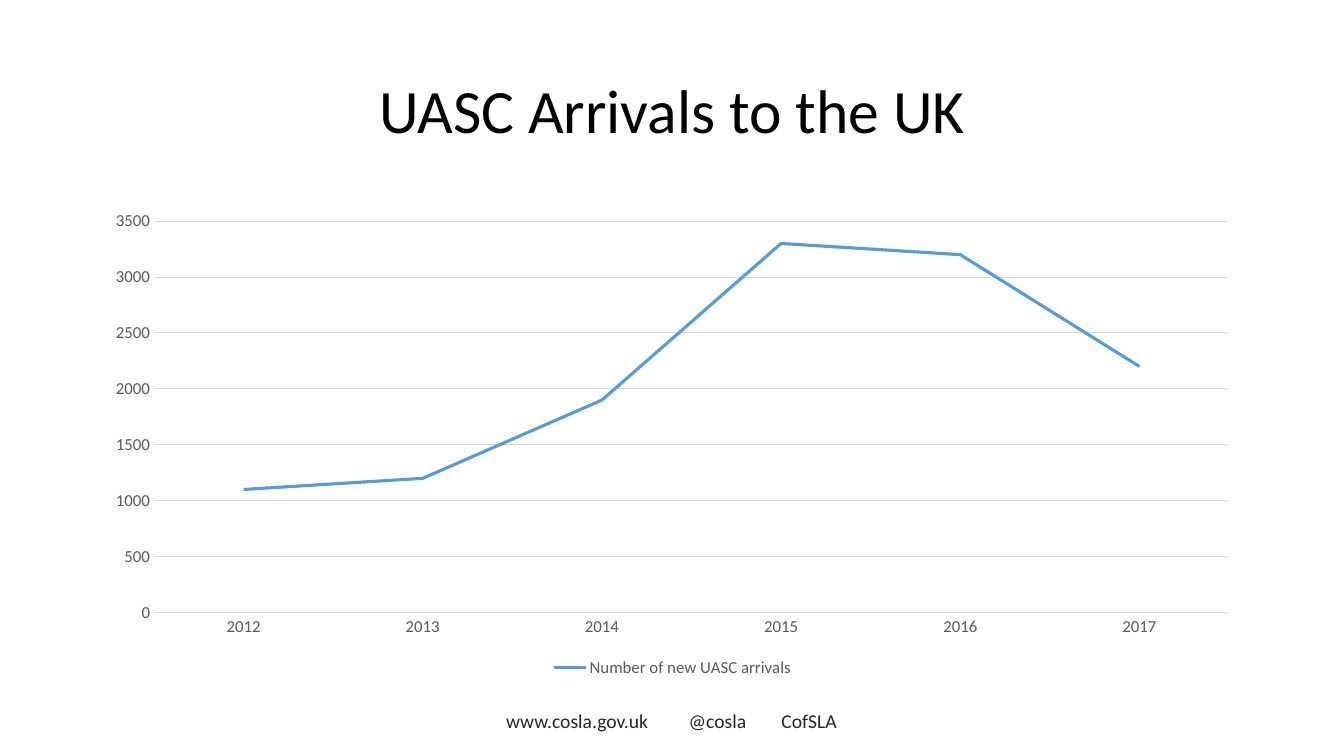
from pptx import Presentation
from pptx.chart.data import CategoryChartData
from pptx.dml.color import RGBColor
from pptx.enum.chart import XL_CHART_TYPE, XL_LEGEND_POSITION, XL_MARKER_STYLE, XL_TICK_MARK
from pptx.enum.text import MSO_ANCHOR, PP_ALIGN
from pptx.oxml.ns import qn
from pptx.util import Inches, Pt
from lxml import etree

LINE = XL_CHART_TYPE.LINE
BOTTOM = XL_LEGEND_POSITION.BOTTOM
NO_MARKER = XL_MARKER_STYLE.NONE
NO_TICK = XL_TICK_MARK.NONE
MIDDLE = MSO_ANCHOR.MIDDLE
CENTER, LEFT = PP_ALIGN.CENTER, PP_ALIGN.LEFT

TITLE = "UASC Arrivals to the UK"
SERIES_NAME = "Number of new UASC arrivals"
ARRIVALS = {"2012": 1100, "2013": 1200, "2014": 1900,
            "2015": 3300, "2016": 3200, "2017": 2200}
CONTACTS = ["www.cosla.gov.uk", "@cosla", "CofSLA"]
CONTACT_TABS = [1.81, 2.73]
FONT = "Calibri"
COLORS = {"title": "000000", "axis": "595959", "grid": "D9D9D9",
          "arrivals": "5B9BD5", "contacts": "262626"}
MARGIN, CONTENT_WIDTH = Inches(0.92), Inches(11.5)


def color(key):
    return RGBColor.from_string(COLORS[key])


def style_font(font, size, key):
    font.name = FONT
    font.size = Pt(size)
    font.bold = False
    font.color.rgb = color(key)


def style_line(line, key, width):
    line.color.rgb = color(key)
    line.width = Pt(width)


def add_title(slide):
    title = slide.shapes.title
    title.left, title.top = MARGIN, Inches(0.4)
    title.width, title.height = CONTENT_WIDTH, Inches(1.45)
    title.text_frame.text = TITLE
    title.text_frame.vertical_anchor = MIDDLE
    heading = title.text_frame.paragraphs[0]
    heading.alignment = CENTER
    heading.line_spacing = 0.9
    style_font(heading.runs[0].font, 44, "title")


def add_arrivals_chart(slide):
    data = CategoryChartData()
    data.categories = list(ARRIVALS)
    data.add_series(SERIES_NAME, list(ARRIVALS.values()))
    chart = slide.shapes.add_chart(
        LINE, MARGIN, Inches(2), CONTENT_WIDTH, Inches(4.76), data).chart
    style_font(chart.font, 12, "axis")
    chart.has_title = False
    chart.has_legend = True
    chart.legend.position = BOTTOM
    chart.legend.include_in_layout = False
    style_font(chart.legend.font, 12, "axis")

    years, counts = chart.category_axis, chart.value_axis
    for axis in (years, counts):
        axis.major_tick_mark = axis.minor_tick_mark = NO_TICK
        style_font(axis.tick_labels.font, 12, "axis")
    style_line(years.format.line, "grid", 0.75)
    counts.format.line.fill.background()
    style_line(counts.major_gridlines.format.line, "grid", 0.75)
    counts.minimum_scale, counts.maximum_scale, counts.major_unit = 0, 3500, 500

    plot = chart.plots[0]
    plot.vary_by_categories = False
    arrivals = plot.series[0]
    arrivals.smooth = False
    arrivals.marker.style = NO_MARKER
    style_line(arrivals.format.line, "arrivals", 2.25)


def add_contacts(slide):
    frame = slide.shapes.add_textbox(
        Inches(4.42), Inches(6.95), Inches(4.5), Inches(0.4)).text_frame
    frame.word_wrap = True
    frame.vertical_anchor = MIDDLE
    frame.margin_left = Inches(0.6)
    contacts = frame.paragraphs[0]
    contacts.text = "\t".join(CONTACTS)
    contacts.alignment = LEFT
    tabs = etree.SubElement(contacts._p.get_or_add_pPr(), qn("a:tabLst"))
    for position in CONTACT_TABS:
        etree.SubElement(tabs, qn("a:tab"), pos=str(Inches(position)), algn="l")
    for run in contacts.runs:
        style_font(run.font, 14, "contacts")


def main():
    deck = Presentation()
    deck.slide_width, deck.slide_height = Inches(13.33), Inches(7.5)
    slide = deck.slides.add_slide(deck.slide_layouts[5])
    add_title(slide)
    add_arrivals_chart(slide)
    add_contacts(slide)
    deck.save("out.pptx")


if __name__ == "__main__":
    main()
